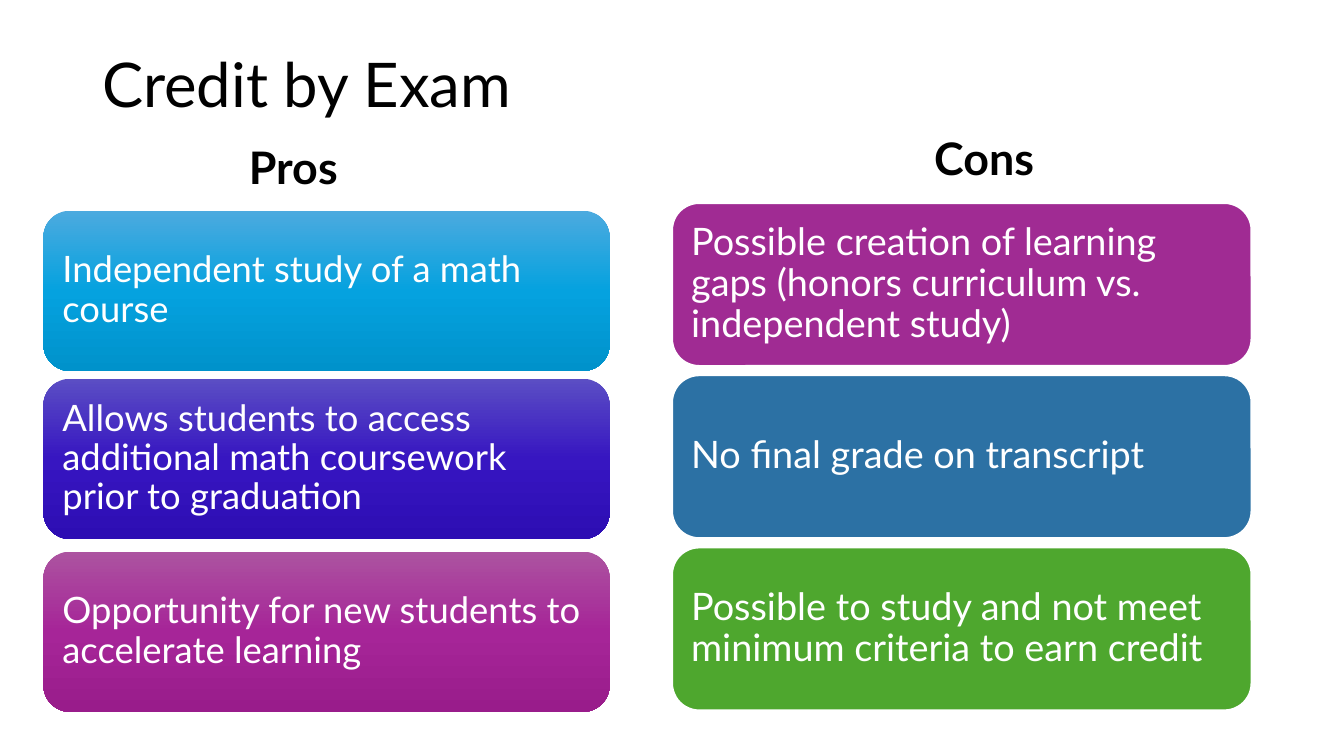
from copy import deepcopy
from dataclasses import dataclass

from pptx import Presentation
from pptx.dml.color import RGBColor
from pptx.enum.shapes import MSO_SHAPE as Shape
from pptx.enum.text import MSO_ANCHOR as Anchor, PP_ALIGN as Align
from pptx.oxml.ns import qn
from pptx.util import Pt


@dataclass(frozen=True)
class Theme:
    font: str = "Lato"
    ink: str = "000000"
    paper: str = "FFFFFF"
    title_size: float = 44
    heading_size: float = 32
    pro_size: float = 26
    con_size: float = 27
    # Top, middle and bottom colour of each gradient
    blue: tuple = ("4CAADF", "05A2DF", "0092CB")
    indigo: tuple = ("5B4EC4", "3716C1", "2D0DB3")
    magenta: tuple = ("AC53A0", "A62598", "991C8B")
    purple: str = "A02B93"
    steel: str = "2C71A4"
    green: str = "4EA72E"


theme = Theme()


def write(frame, text, size, color, anchor, align=Align.LEFT, bold=False):
    frame.word_wrap = True
    frame.vertical_anchor = anchor
    frame.text = text
    paragraph = frame.paragraphs[0]
    paragraph.alignment = align
    paragraph.line_spacing = 0.9
    font = paragraph.runs[0].font
    font.name, font.size, font.bold = theme.font, Pt(size), bold
    font.color.rgb = RGBColor.from_string(color)


def add_card(left, top, width, height, text, size):
    """Add a rounded card with its text and return it, still to be filled."""
    card = slide.shapes.add_shape(
        Shape.ROUNDED_RECTANGLE, Pt(left), Pt(top), Pt(width), Pt(height))
    card.shadow.inherit = False
    frame = card.text_frame
    frame.margin_left = frame.margin_right = Pt(8)
    frame.margin_top = frame.margin_bottom = Pt(8)
    write(frame, text, size, theme.paper, Anchor.MIDDLE)
    return card


deck = Presentation()
deck.slide_width, deck.slide_height = Pt(960), Pt(540)
slide = deck.slides.add_slide(deck.slide_layouts[6])

# Title and column headings
headings = [
    ("Credit by Exam", (66, 10, 828, 104.5), theme.title_size, Anchor.MIDDLE, Align.LEFT, False),
    ("Pros", (155.5, 106, 108, 36), theme.heading_size, Anchor.BOTTOM, Align.CENTER, True),
    ("Cons", (607.5, 106, 191, 30), theme.heading_size, Anchor.BOTTOM, Align.CENTER, True),
]
for text, place, size, anchor, align, bold in headings:
    heading = slide.shapes.add_textbox(*map(Pt, place))
    write(heading.text_frame, text, size, theme.ink, anchor, align, bold)

# Pros: gradient cards
pros = [
    (150.5, "Independent study of a math course", theme.blue),
    (270.5, "Allows students to access additional math coursework prior to graduation",
     theme.indigo),
    (394, "Opportunity for new students to accelerate learning", theme.magenta),
]
for top, text, colors in pros:
    pro = add_card(31, top, 404.5, 114.5, text, theme.pro_size)
    pro.line.fill.background()
    pro.fill.gradient()
    pro.fill.gradient_angle = 270
    stop_list = pro.element.spPr.find(".//" + qn("a:gsLst"))
    stop_list.insert(1, deepcopy(stop_list[0]))
    for stop, position, color in zip(pro.fill.gradient_stops, (0, 0.5, 1), colors):
        stop.position = position
        stop.color.rgb = RGBColor.from_string(color)

# Cons: solid cards at an even pitch
cons = [
    ("Possible creation of learning gaps (honors curriculum vs. independent study)",
     theme.purple),
    ("No final grade on transcript", theme.steel),
    ("Possible to study and not meet minimum criteria to earn credit", theme.green),
]
for row, (text, color) in enumerate(cons):
    con = add_card(480, 145 + 123 * row, 414, 116.5, text, theme.con_size)
    con.fill.solid()
    con.fill.fore_color.rgb = RGBColor.from_string(color)
    con.line.color.rgb = RGBColor.from_string(theme.paper)
    con.line.width = Pt(1.5)

deck.save("out.pptx")
